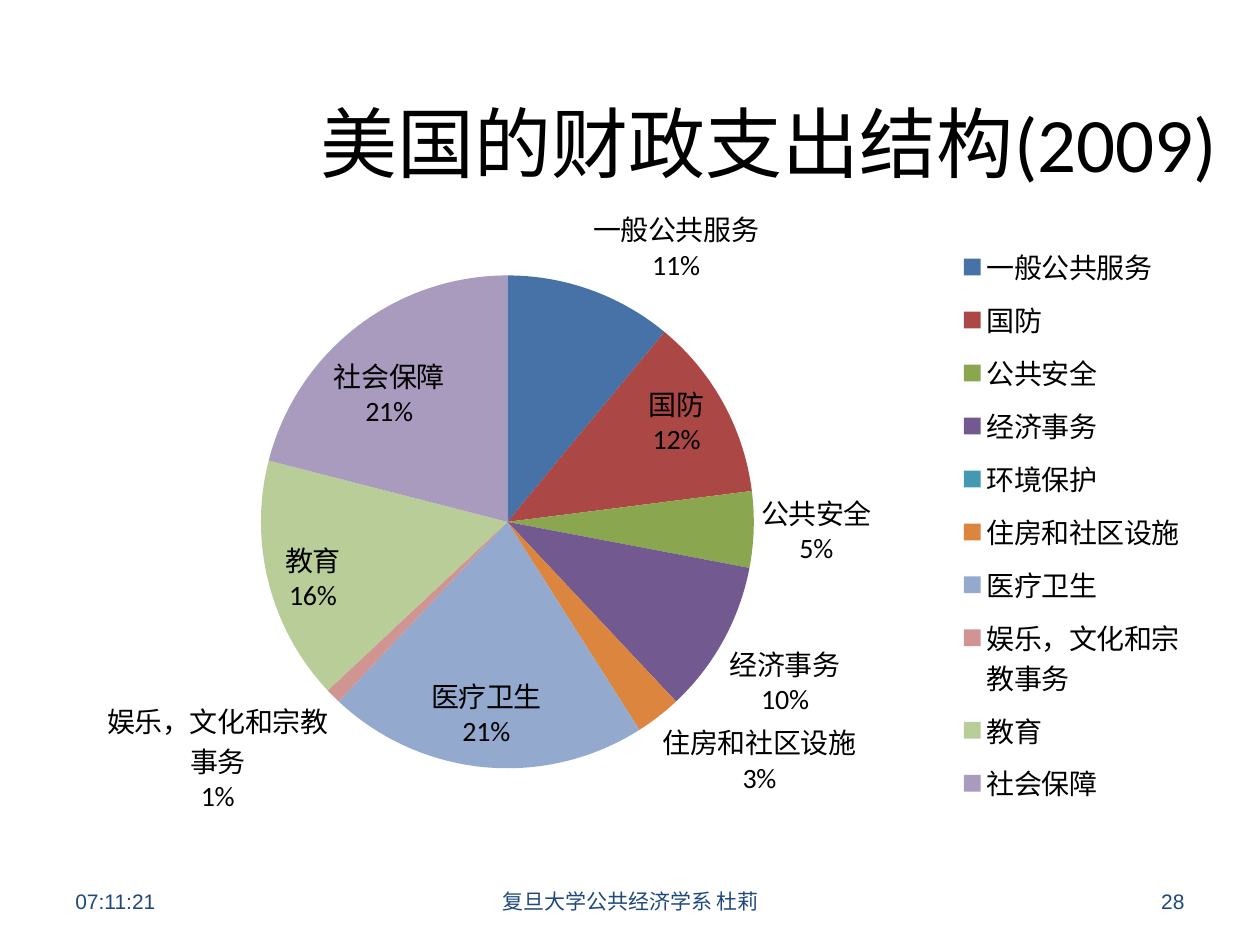
from dataclasses import dataclass

from pptx import Presentation
from pptx.chart.data import CategoryChartData as ChartData
from pptx.dml.color import RGBColor as RGB
from pptx.enum.chart import XL_CHART_TYPE as Kind
from pptx.enum.chart import XL_LABEL_POSITION as Spot
from pptx.enum.chart import XL_LEGEND_POSITION as Side
from pptx.enum.text import MSO_ANCHOR as Anchor
from pptx.enum.text import PP_ALIGN as Align
from pptx.oxml import parse_xml
from pptx.oxml.ns import nsdecls
from pptx.util import Inches, Pt


@dataclass(frozen=True)
class Theme:
    ink: str = "000000"
    navy: str = "1F497D"
    head: str = "Calibri"
    foot: str = "Arial"
    title: int = 44
    label: int = 16
    small: int = 12


THEME = Theme()

# Spending area, share in percent, slice colour
SHARES = [
    ("一般公共服务", 11, "4672A8"),
    ("国防", 12, "AB4744"),
    ("公共安全", 5, "8AA64F"),
    ("经济事务", 10, "725990"),
    ("环境保护", 0, "4299B0"),
    ("住房和社区设施", 3, "DC853E"),
    ("医疗卫生", 21, "93A9CE"),
    ("娱乐，文化和宗教事务", 1, "D09493"),
    ("教育", 16, "B8CD97"),
    ("社会保障", 21, "A89BBD"),
]

FOOTER = [
    ("07:11:21", 0.5, 2.33, Align.LEFT),
    ("复旦大学公共经济学系 杜莉", 3.42, 3.17, Align.CENTER),
    ("28", 7.17, 2.33, Align.RIGHT),
]


def style(font, size, color=THEME.ink, name=THEME.head):
    font.size, font.name = Pt(size), name
    font.color.rgb = RGB.from_string(color)


def write(shape, text, align=Align.LEFT, **look):
    frame = shape.text_frame
    frame.word_wrap = True
    frame.vertical_anchor = Anchor.MIDDLE
    para = frame.paragraphs[0]
    para.alignment = align
    run = para.add_run()
    run.text = text
    style(run.font, **look)
    return para


def add_title(slide, text):
    title = slide.shapes.title
    title.left, title.top = Inches(2.21), Inches(0.71)
    title.width, title.height = Inches(7.79), Inches(0.83)
    para = write(title, text, Align.CENTER, size=THEME.title)
    props = para._p.get_or_add_pPr()
    props.set("marL", str(Inches(1)))
    props.set("indent", str(Inches(-1)))


def layout(x, y, w, h, inner=False):
    """Return a manual chart layout, in fractions of the chart's size."""
    target = '<c:layoutTarget val="inner"/>' if inner else ""
    sizes = "".join(f'<c:{tag} val="{val}"/>'
                    for tag, val in zip("xywh", (x, y, w, h)))
    return parse_xml(
        f'<c:layout {nsdecls("c")}><c:manualLayout>{target}'
        '<c:xMode val="edge"/><c:yMode val="edge"/>'
        f'{sizes}</c:manualLayout></c:layout>')


def add_legend(chart):
    chart.has_legend = True
    legend = chart.legend
    legend.position = Side.RIGHT
    legend.include_in_layout = False
    style(legend.font, THEME.label)
    node = legend._element
    for old in node.findall("{*}layout"):
        node.remove(old)
    node.find("{*}legendPos").addnext(layout(0.78, 0.07, 0.2, 0.84))


def add_labels(plot):
    plot.has_data_labels = True
    labels = plot.data_labels
    labels.show_value = False
    labels.show_percentage = labels.show_category_name = True
    labels.position = Spot.BEST_FIT
    style(labels.font, THEME.label)
    for i, (_, share, _) in enumerate(SHARES):
        if not share:
            labels._element.insert(0, parse_xml(
                f'<c:dLbl {nsdecls("c")}><c:idx val="{i}"/>'
                '<c:delete val="1"/></c:dLbl>'))
    # Labels of single slices count only within the series
    plot.series[0]._element.find("{*}cat").addprevious(labels._element)


def add_pie(slide):
    data = ChartData()
    data.categories = [name for name, _, _ in SHARES]
    data.add_series("Series 1", [share for _, share, _ in SHARES])
    chart = slide.shapes.add_chart(
        Kind.PIE, Inches(0.12), Inches(1.47), Inches(9.53), Inches(5.51),
        data).chart
    chart.has_title = False
    style(chart.font, 10)
    plot = chart.plots[0]
    plot.vary_by_categories = True
    for i, (_, _, color) in enumerate(SHARES):
        fill = plot.series[0].points[i].format.fill
        fill.solid()
        fill.fore_color.rgb = RGB.from_string(color)
    add_labels(plot)
    add_legend(chart)
    area = chart._chartSpace.chart.plotArea
    for old in area.findall("{*}layout"):
        area.remove(old)
    area.insert(0, layout(0.2, 0.13, 0.42, 0.71, inner=True))


def add_footer(slide):
    for text, left, width, align in FOOTER:
        box = slide.shapes.add_textbox(
            Inches(left), Inches(6.95), Inches(width), Inches(0.4))
        write(box, text, align, size=THEME.small, color=THEME.navy,
              name=THEME.foot)


def main():
    deck = Presentation()
    deck.slide_width, deck.slide_height = Inches(10), Inches(7.5)
    slide = deck.slides.add_slide(deck.slide_layouts[5])
    add_title(slide, "美国的财政支出结构(2009)")
    add_pie(slide)
    add_footer(slide)
    deck.save("out.pptx")


if __name__ == "__main__":
    main()
